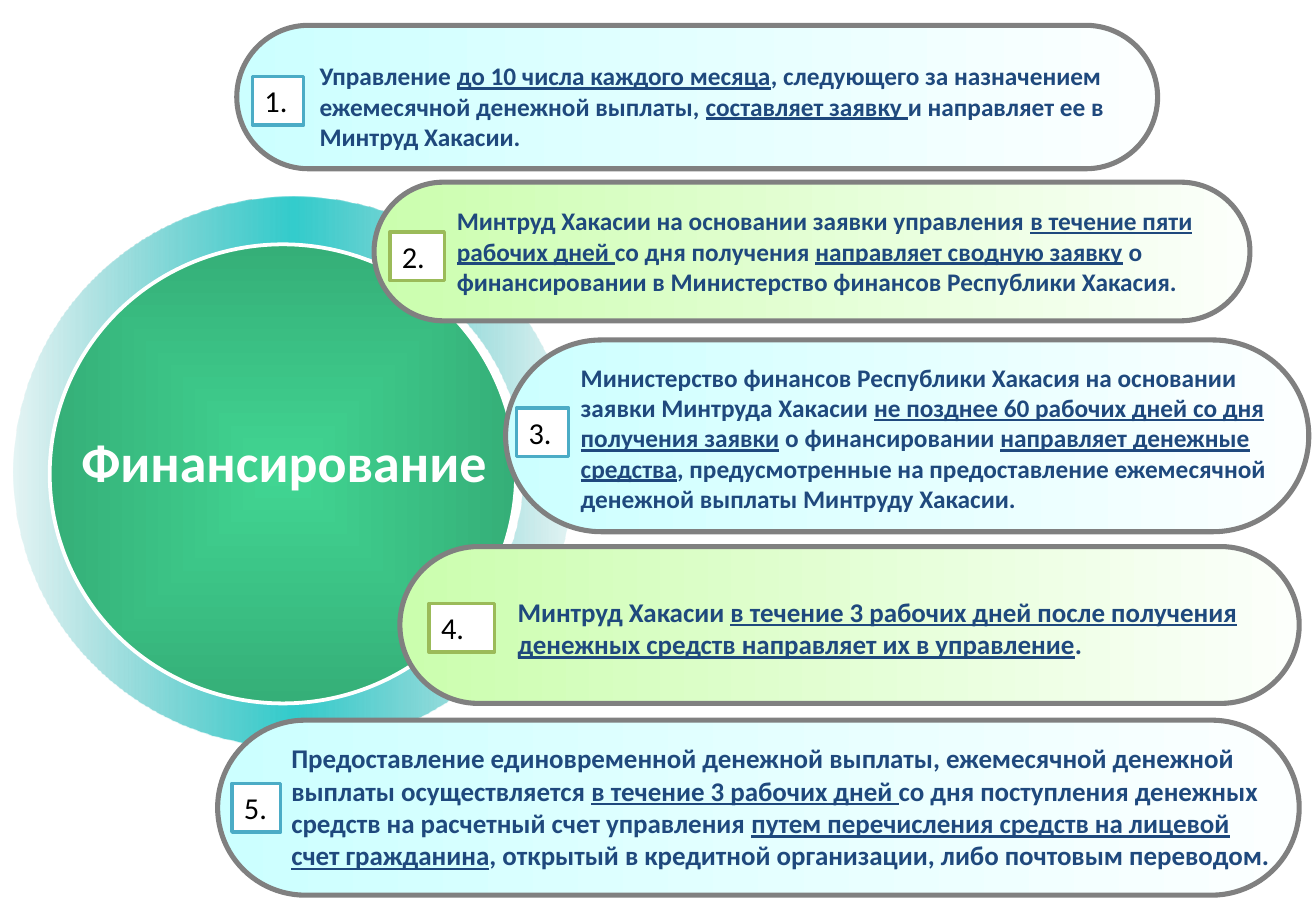
from pptx import Presentation, oxml
from pptx import util as u
from pptx.dml import color
from pptx.enum import shapes, text
from pptx.oxml import ns

COLORS = {
    "ring_edge": "2BABAB", "ring_mid": "33CCCC",
    "disc_centre": "41D592", "disc_edge": "35AF78",
    "blue_start": "CCFFFF", "blue_end": "FCFFFF", "blue_line": "4BACC6",
    "green_start": "CBFEAE", "green_end": "FCFFFB", "green_line": "9BBB59",
    "pill_line": "808080", "navy": "1F497D", "white": "FFFFFF", "black": "000000",
}
FONT = "Calibri"
BADGE_HEIGHT = 1.02
LINEAR = '<a:lin ang="0" scaled="1"/>'
CENTRED = '<a:path path="shape"><a:fillToRect l="50000" t="50000" r="50000" b="50000"/></a:path>'

# Each step: theme, pill box, text box, badge (left, top, width), size, runs (every second one underlined)
STEPS = [
    ("blue", (4.95, 0.53, 19.25, 3.0), (6.43, 1.14, 17.53, 2.18), (5.28, 1.6, 1.07), 15,
     ["Управление ", "до 10 числа каждого месяца",
      ", следующего за назначением ежемесячной денежной выплаты, ",
      "составляет заявку ", "и направляет ее в Минтруд Хакасии."]),
    ("green", (7.82, 3.81, 18.31, 2.9), (9.3, 4.17, 16.26, 2.18), (8.15, 4.85, 1.14), 15,
     ["Минтруд Хакасии на основании заявки управления ",
      "в течение пяти рабочих дней ", "со дня получения ", "направляет сводную заявку",
      " о финансировании в Министерство финансов Республики Хакасия."]),
    ("blue", (10.57, 7.11, 16.79, 4.01), (11.89, 7.44, 15.04, 3.45), (10.8, 8.53, 1.09), 15,
     ["Министерство финансов Республики Хакасия на основании заявки Минтруда Хакасии ",
      "не позднее 60 рабочих дней со дня получения заявки", " о финансировании ",
      "направляет денежные средства",
      ", предусмотренные на предоставление ежемесячной денежной выплаты Минтруду Хакасии."]),
    ("green", (8.36, 11.43, 18.8, 3.28), (10.57, 12.32, 16.36, 1.63), (8.97, 12.62, 1.37), 16,
     ["Минтруд Хакасии ",
      "в течение 3 рабочих дней после получения денежных средств направляет их в управление",
      "."]),
    ("blue", (4.55, 15.06, 22.61, 3.66), (5.84, 15.39, 21.06, 3.0), (4.85, 16.38, 1.02), 16,
     ["Предоставление единовременной денежной выплаты, ежемесячной денежной выплаты осуществляется ",
      "в течение 3 рабочих дней ",
      "со дня поступления денежных средств на расчетный счет управления ",
      "путем перечисления средств на лицевой счет гражданина",
      ", открытый в кредитной организации, либо почтовым переводом."]),
]


def rgb(name):
    return color.RGBColor.from_string(COLORS[name])


def add_shape(s, kind, box, line=None, width=0):
    sp = s.shapes.add_shape(kind, *map(u.Cm, box))
    sp.shadow.inherit = False
    if line:
        sp.line.color.rgb = rgb(line)
        sp.line.width = u.Pt(width)
    else:
        sp.line.fill.background()
    return sp


def fill_gradient(sp, stops, direction=LINEAR):
    """Fill a shape with stops given as (position, colour name, opacity), in percent."""
    sp.fill.gradient()
    marks = "".join(
        f'<a:gs pos="{pos * 1000}"><a:srgbClr val="{COLORS[name]}">'
        f'<a:alpha val="{alpha * 1000}"/></a:srgbClr></a:gs>'
        for pos, name, alpha in stops)
    old = sp._element.spPr.find(ns.qn("a:gradFill"))
    old.getparent().replace(old, oxml.parse_xml(
        f'<a:gradFill {ns.nsdecls("a")} rotWithShape="1">'
        f'<a:gsLst>{marks}</a:gsLst>{direction}</a:gradFill>'))


def add_run(p, words, size, name, bold=False, underline=False):
    r = p.add_run()
    r.text = words
    r.font.name = FONT
    r.font.size = u.Pt(size)
    r.font.bold = bold
    if underline:
        r.font.underline = True
    r.font.color.rgb = rgb(name)
    return r


def add_text(s, box, runs, size, name):
    sp = s.shapes.add_textbox(*map(u.Cm, box))
    tf = sp.text_frame
    tf.word_wrap = True
    return [add_run(tf.paragraphs[0], words, size, name, True, i % 2 == 1)
            for i, words in enumerate(runs)]


def add_pill(s, box, theme):
    sp = add_shape(s, shapes.MSO_SHAPE.ROUNDED_RECTANGLE, box, "pill_line", 3)
    sp.adjustments[0] = 0.5
    fill_gradient(sp, [(0, f"{theme}_start", 100), (100, f"{theme}_end", 100)])


def add_badge(s, place, number, theme):
    sp = add_shape(s, shapes.MSO_SHAPE.RECTANGLE, (*place, BADGE_HEIGHT), f"{theme}_line", 2)
    sp.fill.solid()
    sp.fill.fore_color.rgb = rgb("white")
    tf = sp.text_frame
    tf.word_wrap = True
    tf.margin_right = 0
    tf.vertical_anchor = text.MSO_ANCHOR.TOP
    p = tf.paragraphs[0]
    p.alignment = text.PP_ALIGN.LEFT
    add_run(p, f"{number}.", 18, "black")


def add_emblem(s):
    ring = add_shape(s, shapes.MSO_SHAPE.DONUT, (0.28, 4.11, 11.68, 11.51))
    ring.adjustments[0] = 0.09
    fill_gradient(ring, [(0, "ring_edge", 12), (50, "ring_mid", 100), (100, "ring_edge", 12)])
    disc = add_shape(s, shapes.MSO_SHAPE.OVAL, (1.04, 5.11, 9.75, 9.6), "white", 2.25)
    fill_gradient(disc, [(0, "disc_centre", 100), (100, "disc_edge", 100)], CENTRED)


def add_title(s):
    r = add_text(s, (1.45, 8.84, 9.96, 1.63), ["Финансирование"], 32, "white")[0]
    fill = r.font._element.find(ns.qn("a:solidFill"))
    fill.addnext(oxml.parse_xml(
        f'<a:effectLst {ns.nsdecls("a")}><a:outerShdw dist="35921" dir="2700000">'
        f'<a:srgbClr val="{COLORS["black"]}"/></a:outerShdw></a:effectLst>'))


def main():
    prs = Presentation()
    prs.slide_width, prs.slide_height = u.Cm(27.51), u.Cm(19.05)
    s = prs.slides.add_slide(prs.slide_layouts[6])
    add_emblem(s)
    for theme, pill, *_ in STEPS:
        add_pill(s, pill, theme)
    add_title(s)
    for _, _, box, _, size, runs in STEPS:
        add_text(s, box, runs, size, "navy")
    for number, (theme, _, _, place, *_) in enumerate(STEPS, 1):
        add_badge(s, place, number, theme)
    prs.save("out.pptx")


if __name__ == "__main__":
    main()
